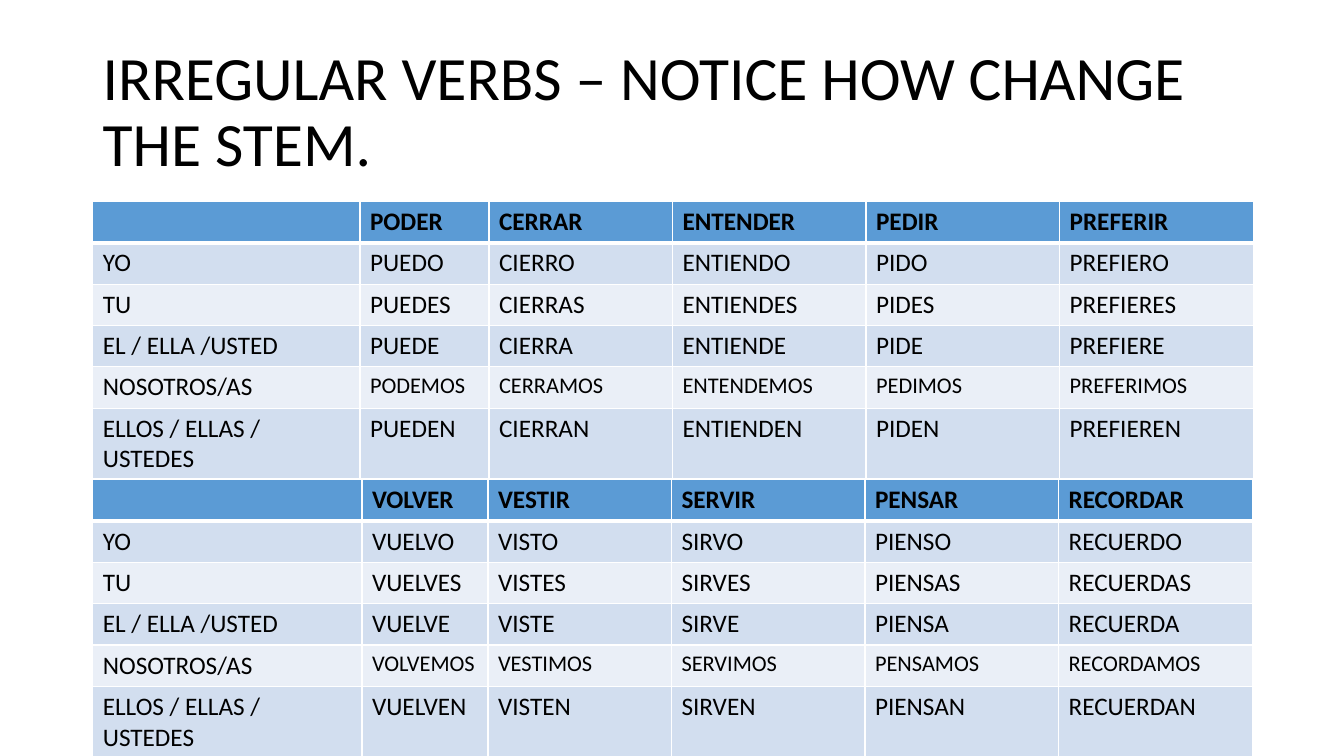
"""Build a slide with two tables of Spanish stem-changing verbs."""
import pptx
import pptx.dml.color
import pptx.enum.text
import pptx.oxml
import pptx.oxml.ns
import pptx.util

BLACK = pptx.dml.color.RGBColor(0x00, 0x00, 0x00)
WHITE = pptx.dml.color.RGBColor(0xFF, 0xFF, 0xFF)
HEADER_BLUE = pptx.dml.color.RGBColor(0x5B, 0x9B, 0xD5)
BAND_DARK = pptx.dml.color.RGBColor(0xD2, 0xDE, 0xEF)
BAND_LIGHT = pptx.dml.color.RGBColor(0xEA, 0xEF, 0xF7)

FONT = "Calibri"
LEFT, WIDTH = 0.92, 11.5
ROW_HEIGHT = 0.41
NOSOTROS_ROW = 4

PRONOUNS = ["", "YO", "TU", "EL / ELLA /USTED", "NOSOTROS/AS", "ELLOS / ELLAS / USTEDES"]
CONJUGATIONS = [
    (2, [2.65, 1.28, 1.82, 1.92, 1.92, 1.92], [
        ["PODER", "PUEDO", "PUEDES", "PUEDE", "PODEMOS", "PUEDEN"],
        ["CERRAR", "CIERRO", "CIERRAS", "CIERRA", "CERRAMOS", "CIERRAN"],
        ["ENTENDER", "ENTIENDO", "ENTIENDES", "ENTIENDE", "ENTENDEMOS", "ENTIENDEN"],
        ["PEDIR", "PIDO", "PIDES", "PIDE", "PEDIMOS", "PIDEN"],
        ["PREFERIR", "PREFIERO", "PREFIERES", "PREFIERE", "PREFERIMOS", "PREFIEREN"],
    ]),
    (4.76, [2.67, 1.25, 1.82, 1.92, 1.92, 1.92], [
        ["VOLVER", "VUELVO", "VUELVES", "VUELVE", "VOLVEMOS", "VUELVEN"],
        ["VESTIR", "VISTO", "VISTES", "VISTE", "VESTIMOS", "VISTEN"],
        ["SERVIR", "SIRVO", "SIRVES", "SIRVE", "SERVIMOS", "SIRVEN"],
        ["PENSAR", "PIENSO", "PIENSAS", "PIENSA", "PENSAMOS", "PIENSAN"],
        ["RECORDAR", "RECUERDO", "RECUERDAS", "RECUERDA", "RECORDAMOS", "RECUERDAN"],
    ]),
]


def write(paragraph, text, size, bold=False):
    paragraph.text = text
    paragraph.font.name = FONT
    paragraph.font.size = pptx.util.Pt(size)
    paragraph.font.bold = bold
    paragraph.font.color.rgb = BLACK


def add_border(cell, side, points):
    cell._tc.get_or_add_tcPr().append(pptx.oxml.parse_xml(
        f'<a:ln{side} {pptx.oxml.ns.nsdecls("a")} w="{pptx.util.Pt(points)}">'
        f'<a:solidFill><a:srgbClr val="{WHITE}"/></a:solidFill></a:ln{side}>'))


deck = pptx.Presentation()
deck.slide_width = pptx.util.Inches(13.33)
deck.slide_height = pptx.util.Inches(7.5)
slide = deck.slides.add_slide(deck.slide_layouts[6])

heading = slide.shapes.add_textbox(
    pptx.util.Inches(LEFT), pptx.util.Inches(0.4),
    pptx.util.Inches(WIDTH), pptx.util.Inches(1.45)).text_frame
heading.word_wrap = True
heading.vertical_anchor = pptx.enum.text.MSO_ANCHOR.MIDDLE
write(heading.paragraphs[0], "IRREGULAR VERBS – NOTICE HOW CHANGE THE STEM.", 44)
heading.paragraphs[0].line_spacing = 0.9

for top, column_widths, verbs in CONJUGATIONS:
    columns = [PRONOUNS] + verbs
    verb_table = slide.shapes.add_table(
        len(PRONOUNS), len(columns),
        pptx.util.Inches(LEFT), pptx.util.Inches(top),
        pptx.util.Inches(WIDTH), pptx.util.Inches(ROW_HEIGHT * len(PRONOUNS))).table
    for row in verb_table.rows:
        row.height = pptx.util.Inches(ROW_HEIGHT)
    for column, (forms, width) in enumerate(zip(columns, column_widths)):
        verb_table.columns[column].width = pptx.util.Inches(width)
        for row, form in enumerate(forms):
            cell = verb_table.cell(row, column)
            size = 16 if row == NOSOTROS_ROW and column > 0 else 18
            write(cell.text_frame.paragraphs[0], form, size, bold=row == 0)
            for side in "LRTB":
                under_header = (row, side) in [(0, "B"), (1, "T")]
                add_border(cell, side, 3 if under_header else 1)
            cell.fill.solid()
            band = BAND_DARK if row % 2 else BAND_LIGHT
            cell.fill.fore_color.rgb = band if row else HEADER_BLUE

deck.save("out.pptx")
